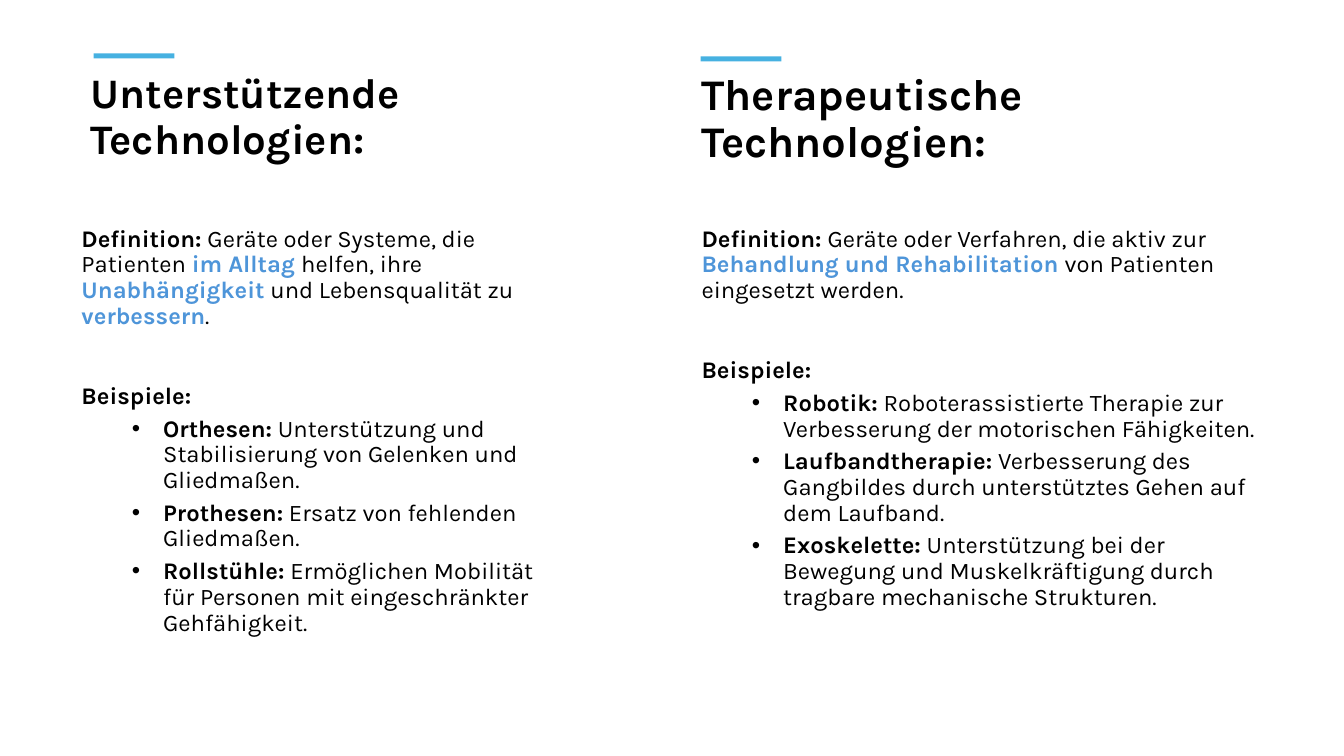
from dataclasses import dataclass

from lxml import etree
from pptx import Presentation
from pptx.dml.color import RGBColor
from pptx.enum.shapes import MSO_SHAPE as SHAPE
from pptx.enum.text import MSO_ANCHOR as ANCHOR, MSO_AUTO_SIZE as FIT, PP_ALIGN as ALIGN
from pptx.oxml.ns import qn
from pptx.util import Inches, Pt

COLORS = {"text": "000000", "accent": "4E95D9", "bar": "46B1E1"}
FONT = "Karla"
BODY_SIZE = 17
TITLE_TOP, TITLE_HEIGHT, BODY_TOP = 0.67, 1.53, 2.2
BAR_WIDTH, BAR_HEIGHT = 0.8, 0.05
INDENT, HANGING = 0.81, 0.31


@dataclass
class Column:
    title: str
    title_size: float
    title_box: tuple
    body_box: tuple
    bar_at: tuple
    definition: list
    examples: list


COLUMNS = [
    Column(
        "Unterstützende Technologien:", 30, (0.8, 4.47), (0.71, 4.98, 3.85), (0.93, 0.53),
        [("Definition:", "bold"), (" Geräte oder Systeme, die Patienten ", "plain"),
         ("im Alltag ", "accent"), ("helfen, ihre ", "plain"),
         ("Unabhängigkeit", "accent"), (" und Lebensqualität zu", "plain"),
         (" verbessern", "accent"), (".", "plain")],
        [("Orthesen:", " Unterstützung und Stabilisierung von Gelenken und Gliedmaßen."),
         ("Prothesen:", " Ersatz von fehlenden Gliedmaßen."),
         ("Rollstühle:", " Ermöglichen Mobilität für Personen mit eingeschränkter "
          "Gehfähigkeit.")],
    ),
    Column(
        "Therapeutische \vTechnologien:", 31.2, (6.86, 5.95), (6.86, 5.76, 3.93), (6.95, 0.56),
        [("Definition:", "bold"), (" Geräte oder Verfahren, die aktiv zur ", "plain"),
         ("Behandlung und Rehabilitation", "accent"),
         (" von Patienten eingesetzt werden.", "plain")],
        [("Robotik:", " Roboterassistierte Therapie zur Verbesserung der motorischen "
          "Fähigkeiten."),
         ("Laufbandtherapie:", " Verbesserung des Gangbildes durch unterstütztes Gehen auf "
          "dem Laufband."),
         ("Exoskelette:", " Unterstützung bei der Bewegung und Muskelkräftigung durch "
          "tragbare mechanische Strukturen.")],
    ),
]


def style_run(r, size, style):
    r.font.name = FONT
    r.font.size = Pt(size)
    r.font.bold = style != "plain"
    color = COLORS["accent" if style == "accent" else "text"]
    r.font.color.rgb = RGBColor.from_string(color)


def prepare_frame(tf):
    tf.word_wrap = True
    tf.auto_size = FIT.NONE
    tf.vertical_anchor = ANCHOR.TOP


def add_paragraph(tf, first, runs, before):
    p = tf.paragraphs[0] if first else tf.add_paragraph()
    p.alignment = ALIGN.LEFT
    p.line_spacing = 0.9
    p.space_before = Pt(before)
    for text, style in runs:
        r = p.add_run()
        r.text = text
        style_run(r, BODY_SIZE, style)
    return p


def add_bullet(p):
    p.level = 1
    pPr = p._p.get_or_add_pPr()
    pPr.set("marL", str(Inches(INDENT)))
    pPr.set("indent", str(-Inches(HANGING)))
    etree.SubElement(pPr, qn("a:buFont")).set("typeface", "Arial")
    etree.SubElement(pPr, qn("a:buChar")).set("char", "•")


def fill_title(sp, column):
    left, width = column.title_box
    sp.left, sp.top = Inches(left), Inches(TITLE_TOP)
    sp.width, sp.height = Inches(width), Inches(TITLE_HEIGHT)
    tf = sp.text_frame
    prepare_frame(tf)
    p = tf.paragraphs[0]
    p.text = column.title
    p.alignment = ALIGN.LEFT
    p.line_spacing = 0.9
    for r in p.runs:
        style_run(r, column.title_size, "bold")


def add_body(s, column):
    left, width, height = column.body_box
    sp = s.shapes.add_textbox(Inches(left), Inches(BODY_TOP), Inches(width), Inches(height))
    tf = sp.text_frame
    prepare_frame(tf)
    add_paragraph(tf, True, column.definition, 10)
    add_paragraph(tf, False, [("Beispiele:", "bold")], 38.8)
    for name, text in column.examples:
        add_bullet(add_paragraph(tf, False, [(name, "bold"), (text, "plain")], 5))


def add_bar(s, column):
    left, top = column.bar_at
    sp = s.shapes.add_shape(SHAPE.RECTANGLE, Inches(left), Inches(top),
                            Inches(BAR_WIDTH), Inches(BAR_HEIGHT))
    sp.shadow.inherit = False
    sp.fill.solid()
    sp.fill.fore_color.rgb = RGBColor.from_string(COLORS["bar"])
    sp.line.fill.background()


def add_column(s, title, column):
    fill_title(title, column)
    add_body(s, column)
    add_bar(s, column)


def main():
    prs = Presentation()
    prs.slide_width, prs.slide_height = Inches(13.33), Inches(7.5)
    s = prs.slides.add_slide(prs.slide_layouts[5])
    titles = [s.shapes.title, s.shapes.add_textbox(0, 0, 0, 0)]
    for title, column in zip(titles, COLUMNS):
        add_column(s, title, column)
    prs.save("out.pptx")


if __name__ == "__main__":
    main()
